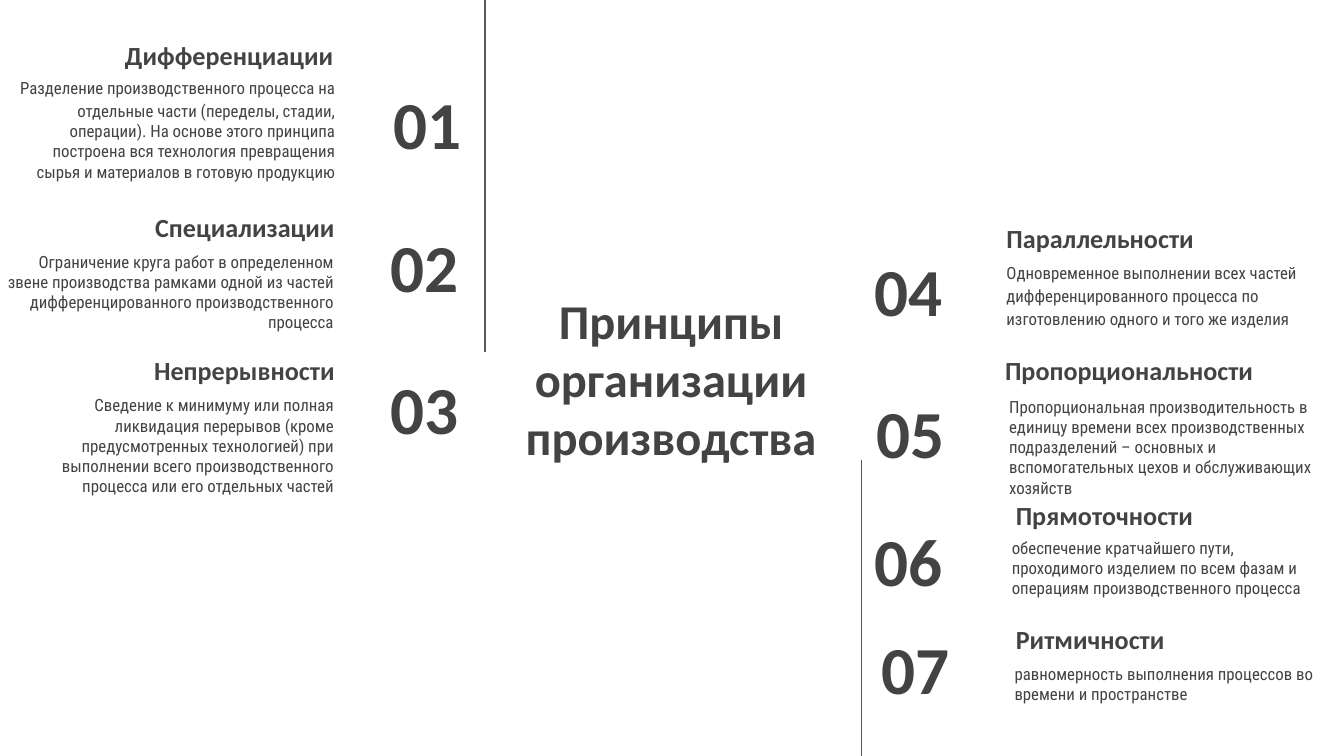
import pptx
import pptx.util
import pptx.dml.color
import pptx.enum.shapes
import pptx.enum.text
import pptx.oxml.ns
import lxml.etree

Inches = pptx.util.Inches
Pt = pptx.util.Pt
ALIGN = pptx.enum.text.PP_ALIGN
ANCHOR = pptx.enum.text.MSO_ANCHOR

COLORS = {"background": "FFFFFF", "text": "434343", "line": "595959"}
BOX_HEIGHT = 0.63
HEADING_WIDTH = 2.16

LEFT_PRINCIPLES = [
    ("01", (2.32, 0.6), "Дифференциации", (0.42, 0), (-0.04, 0.35, 2.63),
     "Разделение производственного процесса на отдельные части (переделы, стадии, операции). "
     "На основе этого принципа построена вся технология превращения сырья и материалов "
     "в готовую продукцию", {"lead_size": 18}),
    ("02", (2.3, 1.66), "Специализации", (0.43, 1.28), (-0.12, 1.77, 2.7),
     "Ограничение круга работ в определенном звене производства рамками одной из частей "
     "дифференцированного производственного процесса", {}),
    ("03", (2.3, 2.72), "Непрерывности", (0.43, 2.34), (-0.04, 2.84, 2.62),
     "Сведение к минимуму или полная ликвидация перерывов (кроме предусмотренных технологией) "
     "при выполнении всего производственного процесса или его отдельных частей", {}),
]

RIGHT_PRINCIPLES = [
    ("04", (6.41, 1.84), "Параллельности", (7.39, 1.36), (7.39, 1.83, 2.55),
     "Одновременное выполнении всех частей дифференцированного процесса по изготовлению "
     "одного и того же изделия", {"line_spacing": 1.15, "space_after": 10}),
    ("05", (6.42, 2.9), "Пропорциональности", (7.38, 2.34), (7.41, 2.85, 2.59),
     "Пропорциональная производительность в единицу времени всех производственных "
     "подразделений – основных и вспомогательных цехов и обслуживающих хозяйств", {}),
    ("06", (6.41, 3.85), "Прямоточности", (7.46, 3.42), (7.43, 3.9, 2.55),
     "обеспечение кратчайшего пути, проходимого изделием по всем фазам и операциям "
     "производственного процесса", {}),
    ("07", (6.46, 4.65), "Ритмичности", (7.46, 4.34), (7.45, 4.84, 2.55),
     "равномерность выполнения процессов во времени и пространстве", {}),
]


def rgb(name):
    return pptx.dml.color.RGBColor.from_string(COLORS[name])


def add_run(paragraph, text, size, font, bold=False):
    run = paragraph.add_run()
    run.text = text
    run.font.size = Pt(size)
    run.font.name = font
    run.font.bold = bold
    run.font.color.rgb = rgb("text")


def add_text(slide, text, left, top, width, height=BOX_HEIGHT, size=9,
             font="Roboto Condensed", bold=False, align=ALIGN.LEFT, anchor=ANCHOR.TOP,
             line_spacing=None, space_after=None, lead_size=None):
    box = slide.shapes.add_textbox(Inches(left), Inches(top), Inches(width), Inches(height))
    frame = box.text_frame
    frame.word_wrap = True
    frame.vertical_anchor = anchor
    frame.margin_left = frame.margin_right = Inches(0.1)
    frame.margin_top = frame.margin_bottom = Inches(0.1)
    paragraph = frame.paragraphs[0]
    paragraph.alignment = align
    if line_spacing:
        paragraph.line_spacing = line_spacing
    if space_after:
        paragraph.space_after = Pt(space_after)
    if lead_size:
        add_run(paragraph, " ", lead_size, "Times New Roman")
    add_run(paragraph, text, size, font, bold)


def add_divider(slide, x, top, bottom):
    divider = slide.shapes.add_connector(
        pptx.enum.shapes.MSO_CONNECTOR.STRAIGHT,
        Inches(x), Inches(top), Inches(x), Inches(bottom))
    divider.line.color.rgb = rgb("line")
    divider.line.width = Pt(0.75)
    properties = divider._element.spPr
    lxml.etree.SubElement(properties, pptx.oxml.ns.qn("a:effectLst"))


def add_principle(slide, principle, align, number_width):
    number, number_at, heading, heading_at, body_at, body, body_format = principle
    add_text(slide, heading, *heading_at, HEADING_WIDTH, size=14, font="Calibri",
             bold=True, align=align, anchor=ANCHOR.BOTTOM)
    add_text(slide, body, *body_at, align=align, **body_format)
    add_text(slide, number, *number_at, number_width, size=36, font="Calibri",
             bold=True, align=align, anchor=ANCHOR.MIDDLE)


def main():
    presentation = pptx.Presentation()
    presentation.slide_width = Inches(10)
    presentation.slide_height = Inches(10 * 9 / 16)
    slide = presentation.slides.add_slide(presentation.slide_layouts[6])
    slide.background.fill.solid()
    slide.background.fill.fore_color.rgb = rgb("background")

    add_text(slide, "Принципы организации производства", 3.7, 2.3, 2.59, 1.03, size=26,
             font="Calibri", bold=True, align=ALIGN.CENTER, anchor=ANCHOR.MIDDLE)
    add_divider(slide, 3.61, 0, 2.62)
    add_divider(slide, 6.41, 3.42, 5.64)
    for principle in LEFT_PRINCIPLES:
        add_principle(slide, principle, ALIGN.RIGHT, 1.21)
    for principle in RIGHT_PRINCIPLES:
        add_principle(slide, principle, ALIGN.LEFT, 1.17)

    presentation.save("out.pptx")


if __name__ == "__main__":
    main()
